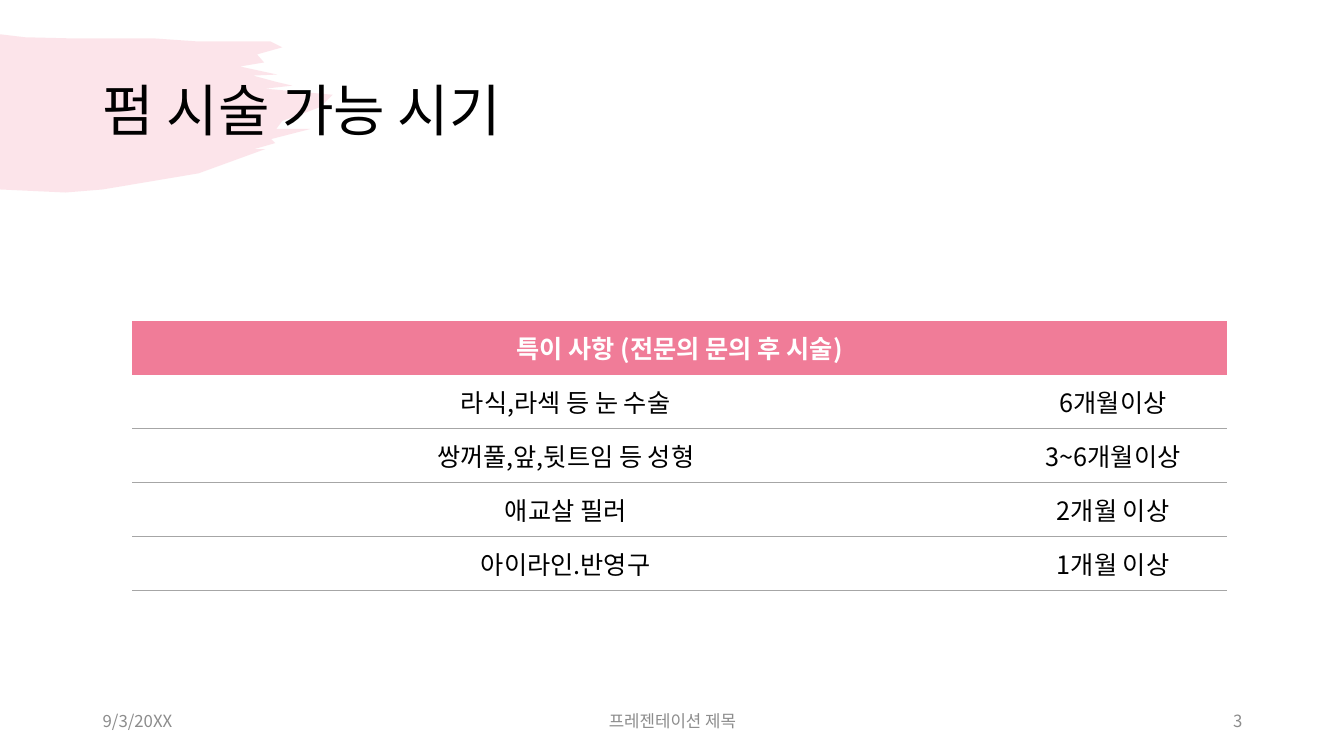
from lxml.etree import SubElement
from pptx import Presentation
from pptx.dml.color import RGBColor
from pptx.enum.text import MSO_ANCHOR as Anchor, PP_ALIGN as Align
from pptx.oxml import parse_xml
from pptx.oxml.ns import nsdecls, qn
from pptx.util import Pt

PX = 9144  # EMU per px, 100 px to the inch
FONT = "Noto Sans CJK KR"
PINK, BLACK, WHITE, GREY, RULE = "F07C98", "000000", "FFFFFF", "8C8C8C", "A6A6A6"
NO_STYLE = "{2D5ABB26-0587-4C30-8999-92F81FD0307C}"

HEADING = "특이 사항 (전문의 문의 후 시술)"
PERIODS = [
    ("라식,라섹 등 눈 수술", "6개월이상"),
    ("쌍꺼풀,앞,뒷트임 등 성형", "3~6개월이상"),
    ("애교살 필러", "2개월 이상"),
    ("아이라인.반영구", "1개월 이상"),
]

# Corners of the brush stroke, clockwise from the top left of its box
BRUSH = [
    (0, 0), (25, 3), (66, 4), (151, 4), (194, 7), (248, 7), (268, 7), (280, 13),
    (255, 20), (262, 28), (238, 32), (275, 40), (251, 41), (273, 47), (290, 51),
    (263, 54), (330, 60), (318, 72), (300, 79), (280, 86), (274, 94), (308, 94),
    (269, 104), (273, 108), (252, 114), (263, 114), (197, 138), (102, 154),
    (65, 157), (0, 154),
]


def color(value):
    return RGBColor.from_string(value)


def emu(*lengths):
    return [length * PX for length in lengths]


def write(frame, text, size, ink, align=Align.LEFT, bold=False):
    frame.word_wrap = True
    para = frame.paragraphs[0]
    para.alignment = align
    span = para.add_run()
    span.text = text
    font = span.font
    font.size, font.bold, font.name = Pt(size), bold, FONT
    font.color.rgb = color(ink)
    SubElement(font._element, qn("a:ea"), typeface=FONT)
    return para


def add_brush(page, left, top):
    """Soft pink brush stroke bleeding off the left edge."""
    start, *corners = [(left + x, top + y) for x, y in BRUSH]
    builder = page.shapes.build_freeform(*start, scale=PX)
    builder.add_line_segments(corners, close=True)
    brush = builder.convert_to_shape()
    brush.shadow.inherit = False
    brush.line.fill.background()
    brush.fill.solid()
    brush.fill.fore_color.rgb = color(PINK)
    tint = brush._element.spPr.find(qn("a:solidFill"))[0]
    SubElement(tint, qn("a:alpha"), val="20000")


def add_title(page, left, top, width, height):
    title = page.shapes.title
    title.left, title.top, title.width, title.height = emu(left, top, width, height)
    title.text_frame.vertical_anchor = Anchor.MIDDLE
    para = write(title.text_frame, "펌 시술 가능 시기", 40, BLACK)
    para.line_spacing = 0.9


def fill_cell(cell, text, ink, bold=False):
    cell.vertical_anchor = Anchor.MIDDLE
    write(cell.text_frame, text, 18, ink, Align.CENTER, bold)


def underline_cell(cell):
    cell.fill.background()
    cell._tc.get_or_add_tcPr().insert(0, parse_xml(
        f'<a:lnB {nsdecls("a")} w="3175"><a:solidFill><a:srgbClr val="{RULE}"/>'
        '</a:solidFill></a:lnB>'))


def add_periods(page, left, top, width, height):
    """Waiting period for each procedure, under one merged heading."""
    rows = len(PERIODS) + 1
    frame = page.shapes.add_table(rows, 2, *emu(left, top, width, height))
    table = frame.table
    table._tbl.tblPr.find(qn("a:tableStyleId")).text = NO_STYLE
    table.horz_banding = False
    for column, share in zip(table.columns, (860, width - 860)):
        column.width = share * PX
    for row in table.rows:
        row.height = height * PX // rows

    heading = table.cell(0, 0)
    heading.merge(table.cell(0, 1))
    heading.fill.solid()
    heading.fill.fore_color.rgb = color(PINK)
    fill_cell(heading, HEADING, WHITE, bold=True)
    for row, texts in enumerate(PERIODS, 1):
        for column, text in enumerate(texts):
            cell = table.cell(row, column)
            fill_cell(cell, text, BLACK)
            underline_cell(cell)


def add_footer(page, left, top, width, height):
    """Date, deck name and page number, in left, centre and right boxes."""
    side, middle = 300, 450
    parts = [
        ("9/3/20XX", left, side, Align.LEFT),
        ("프레젠테이션 제목", left + (width - middle) // 2, middle, Align.CENTER),
        ("3", left + width - side, side, Align.RIGHT),
    ]
    for text, x, part_width, align in parts:
        box = page.shapes.add_textbox(*emu(x, top, part_width, height))
        box.text_frame.vertical_anchor = Anchor.MIDDLE
        write(box.text_frame, text, 12, GREY, align)


def main():
    deck = Presentation()
    deck.slide_width, deck.slide_height = emu(1333, 750)
    page = deck.slides.add_slide(deck.slide_layouts[5])
    page.background.fill.solid()
    page.background.fill.fore_color.rgb = color(WHITE)
    add_brush(page, 0, 34)
    # The title sits in front of the brush stroke
    page.shapes._spTree.append(page.shapes.title._element)
    add_title(page, 92, 40, 1150, 145)
    add_periods(page, 131, 318, 1086, 268)
    add_footer(page, 92, 695, 1150, 40)
    deck.save("out.pptx")


if __name__ == "__main__":
    main()
